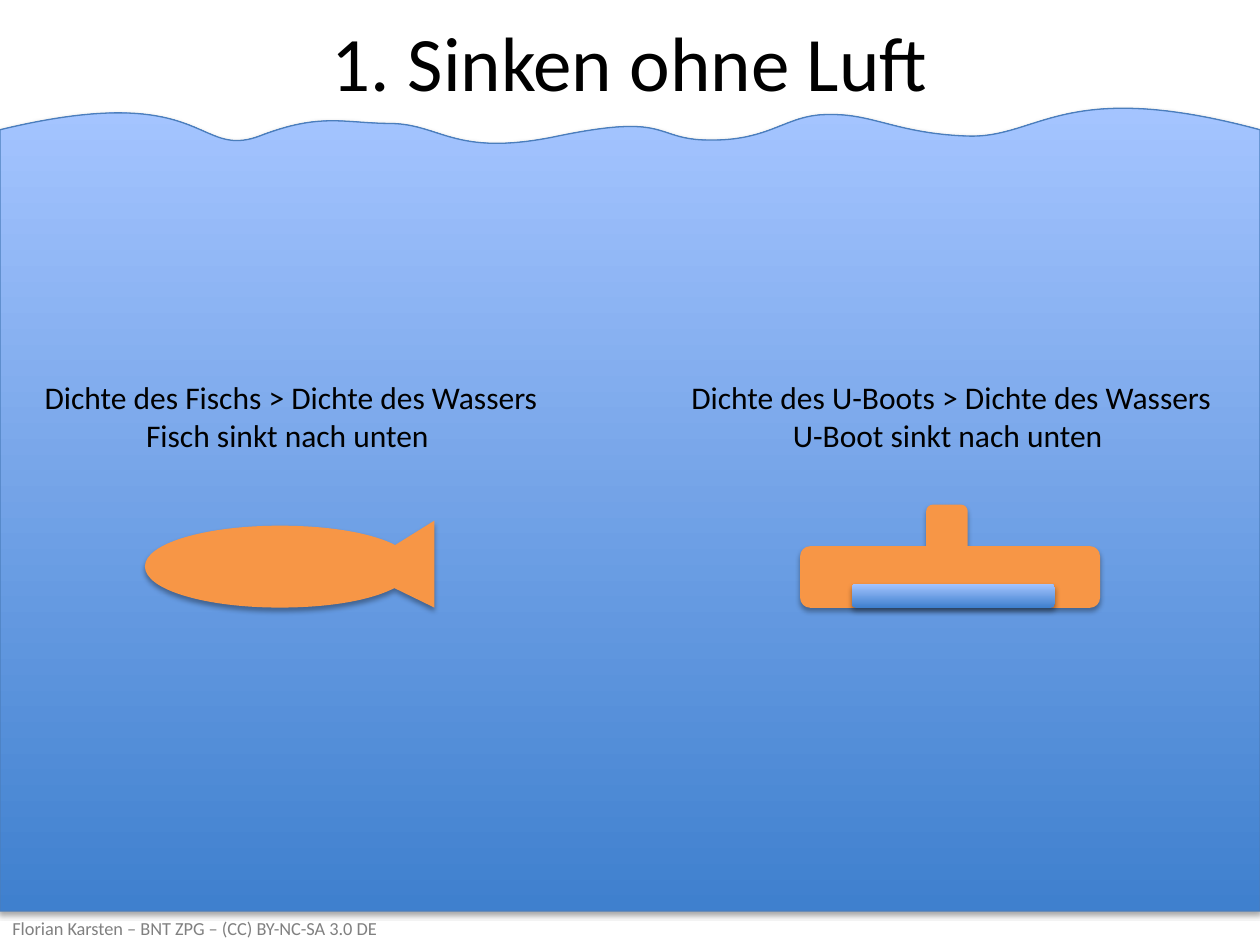
import pptx
import pptx.dml.color
import pptx.enum.shapes
import pptx.enum.text
import pptx.oxml.ns
import pptx.util
from lxml import etree

Pt = pptx.util.Pt
RGB = pptx.dml.color.RGBColor
ALIGN = pptx.enum.text.PP_ALIGN
MIDDLE = pptx.enum.text.MSO_ANCHOR.MIDDLE
qn = pptx.oxml.ns.qn

BLACK = RGB(0x00, 0x00, 0x00)
GRAY = RGB(0x80, 0x80, 0x80)
ORANGE = RGB(0xF7, 0x96, 0x46)
DEEP_BLUE = RGB(0x3F, 0x80, 0xCE)
LIGHT_BLUE = RGB(0xA4, 0xC4, 0xFF)
LINE_BLUE = RGB(0x4B, 0x7E, 0xBC)


def add_text(slide, box, text, size, color=BLACK, align=ALIGN.CENTER,
             anchor=None, wrap=True):
    sp = slide.shapes.add_textbox(*(Pt(v) for v in box))
    tf = sp.text_frame
    tf.word_wrap = wrap
    if anchor is not None:
        tf.vertical_anchor = anchor
    if not wrap:
        tf.auto_size = pptx.enum.text.MSO_AUTO_SIZE.SHAPE_TO_FIT_TEXT
    for i, line in enumerate(text.split("\n")):
        p = tf.paragraphs[0] if i == 0 else tf.add_paragraph()
        p.alignment = align
        r = p.add_run()
        r.text = line
        r.font.name = "Calibri"
        r.font.size = Pt(size)
        r.font.color.rgb = color
    return sp


def add_shadow(sp):
    """Soft shadow falling straight down."""
    sp.shadow.inherit = False
    effects = sp._element.spPr.find(qn("a:effectLst"))
    shadow = etree.SubElement(
        effects, qn("a:outerShdw"), blurRad=str(Pt(3.1)), dist=str(Pt(1.8)),
        dir="5400000", rotWithShape="0")
    color = etree.SubElement(shadow, qn("a:srgbClr"), val="000000")
    etree.SubElement(color, qn("a:alpha"), val="35000")


def fill_water(sp):
    """Gradient from deep blue at the bottom to light blue at the top."""
    sp.fill.gradient()
    sp.fill.gradient_angle = 90
    for stop, color in zip(sp.fill.gradient_stops, (DEEP_BLUE, LIGHT_BLUE)):
        stop.color.rgb = color


def add_outline(slide, box, start, segments):
    """Closed outline: pairs are lines, six numbers are a cubic curve."""
    left, top, width, height = (Pt(v) for v in box)
    builder = slide.shapes.build_freeform(Pt(start[0]), Pt(start[1]), scale=1.0)
    builder.add_line_segments([(Pt(s[-2]), Pt(s[-1])) for s in segments])
    sp = builder.convert_to_shape()
    sp.left, sp.top, sp.width, sp.height = left, top, width, height

    # Turn the straight pieces into curves where controls are given
    path = next(sp._element.spPr.iter(qn("a:path")))
    path.set("w", str(width))
    path.set("h", str(height))
    for child in list(path):
        path.remove(child)
    for i, seg in enumerate([start, *segments]):
        tag = "moveTo" if i == 0 else "lnTo" if len(seg) == 2 else "cubicBezTo"
        step = etree.SubElement(path, qn("a:" + tag))
        for x, y in zip(seg[::2], seg[1::2]):
            etree.SubElement(step, qn("a:pt"), x=str(Pt(x)), y=str(Pt(y)))
    etree.SubElement(path, qn("a:close"))
    add_shadow(sp)
    return sp


def add_water(slide, left, top, width, height):
    shore = 12.2
    sp = add_outline(slide, (left, top, width, height), (0, shore), [
        (118.8, -16.6, 111.6, 29.4, 148.3, 15.8),
        (183.6, 2.1, 196.6, 8.6, 223.9, 8.6),
        (252, 9.3, 259.9, 27.3, 315.4, 16.5),
        (380.2, 2.8, 373, 15.8, 399.6, 17.9),
        (439.9, 20.1, 447.8, 3.5, 473, 3.5),
        (499, 2.8, 511.9, 14.3, 553, 15.8),
        (594, 17.2, 607.7, -18.1, width, shore),
        (width, height), (0, height), (0, shore)])
    fill_water(sp)
    sp.line.color.rgb = LINE_BLUE
    sp.line.width = Pt(0.75)


def add_body(slide, box, start, segments):
    sp = add_outline(slide, box, start, segments)
    sp.fill.solid()
    sp.fill.fore_color.rgb = ORANGE
    sp.line.fill.background()


def add_fish(slide, left, top, width, height):
    add_body(slide, (left, top, width, height), (width, 0), [
        # tail, then the oval body
        (width, height), (142.6, 38.6), (141.1, 39.3),
        (126.7, 46.1, 103.7, height, 77, height),
        (34.6, height, 0, 39.6, 0, 26.2),
        (0, 13, 34.6, 2.9, 77, 2.9),
        (103.7, 2.9, 126.7, 6.5, 141.1, 13), (143, 14)])


def add_submarine(slide, left, top, width, height):
    deck, r, k = 23.8, 5.8, 2.6         # hull top, corner radius, control
    t0, t1, tr, tk = 72, 95.8, 4, 1.8   # tower sides, corner radius, control
    add_body(slide, (left, top, width, height), (t0 + tr, 0), [
        (t1 - tr, 0), (t1 - tk, 0, t1, tk, t1, tr), (t1, deck),
        (width - r, deck),
        (width - k, deck, width, deck + k, width, deck + r),
        (width, height - r),
        (width, height - k, width - k, height, width - r, height),
        (r, height), (k, height, 0, height - k, 0, height - r),
        (0, deck + r), (0, deck + k, k, deck, r, deck),
        (t0, deck), (t0, tr), (t0, tk, t0 + tk, 0, t0 + tr, 0)])


def add_ballast_tank(slide, left, top, width, height):
    sp = slide.shapes.add_shape(
        pptx.enum.shapes.MSO_SHAPE.ROUNDED_RECTANGLE,
        Pt(left), Pt(top), Pt(width), Pt(height))
    fill_water(sp)
    sp.line.fill.background()
    add_shadow(sp)


def main():
    prs = pptx.Presentation()
    prs.slide_width, prs.slide_height = Pt(720), Pt(540)
    slide = prs.slides.add_slide(prs.slide_layouts[6])

    # Water, title and footer
    add_water(slide, 0, 62, 720, 458.6)
    add_text(slide, (0, 0, 720, 69.6), "1. Sinken ohne Luft", 44,
             anchor=MIDDLE)
    add_text(slide, (0, 520.6, 571.7, 19.4),
             "Florian Karsten – BNT ZPG – (CC) BY-NC-SA 3.0 DE", 10.5,
             color=GRAY, align=ALIGN.LEFT, anchor=MIDDLE)

    # Fish and submarine
    add_fish(slide, 82.8, 297.5, 165.4, 49.7)
    add_submarine(slide, 457.2, 288.3, 171.4, 59)

    # Captions
    for left, width, owner, name in ((15.8, 301, "Fischs", "Fisch"),
                                     (385.2, 316.8, "U-Boots", "U-Boot")):
        add_text(slide, (left, 212.4, width, 51),
                 f"Dichte des {owner} > Dichte des Wassers\n"
                 f"{name} sinkt nach unten ", 18, wrap=False)

    add_ballast_tank(slide, 486.8, 333.6, 116, 13.7)
    prs.save("out.pptx")


if __name__ == "__main__":
    main()
